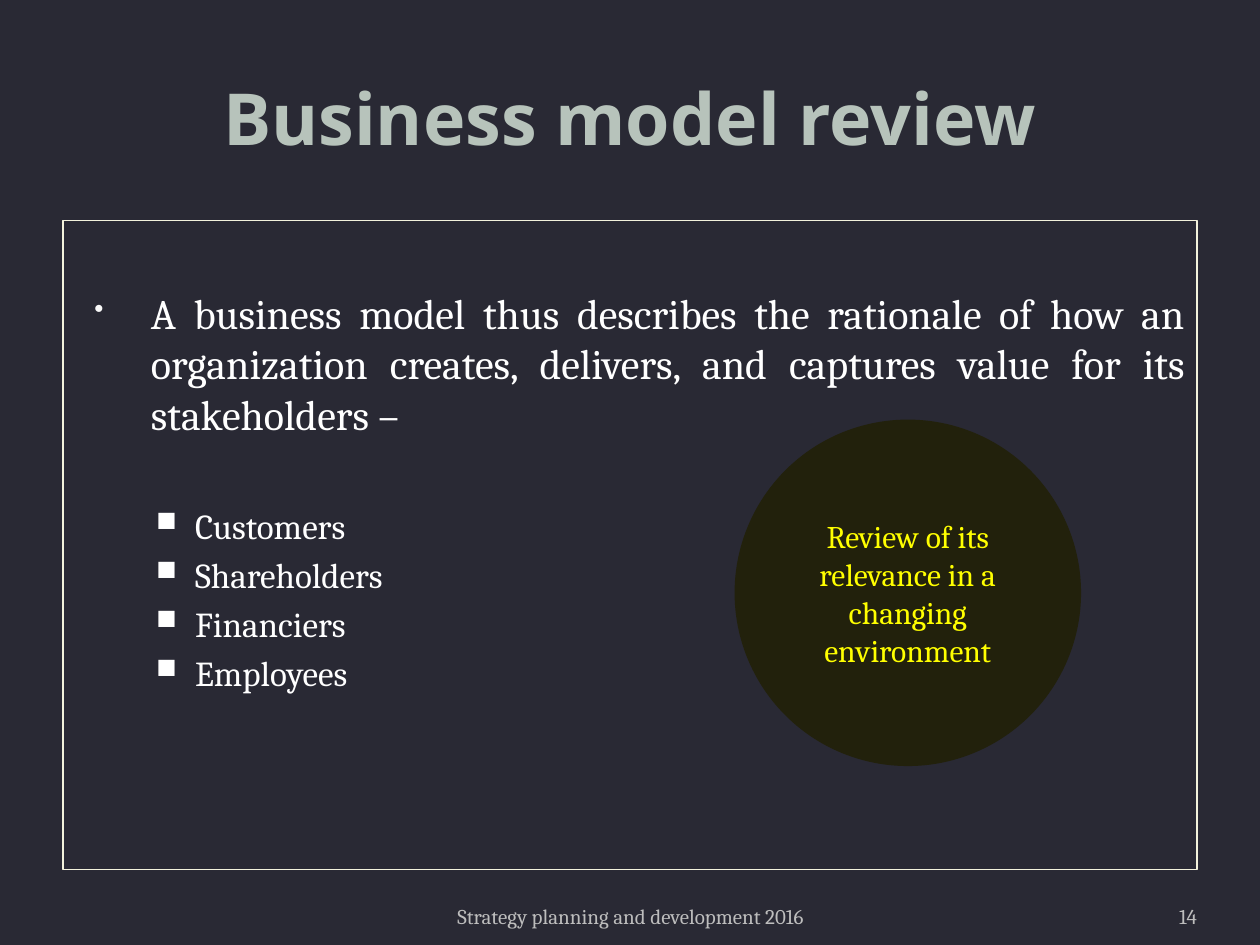
from pptx import Presentation
from pptx.dml.color import RGBColor
from pptx.enum.shapes import MSO_SHAPE
from pptx.enum.text import MSO_ANCHOR, PP_ALIGN
from pptx.oxml.ns import qn
from pptx.util import Inches, Pt
from lxml import etree

RECT, ELLIPSE = MSO_SHAPE.RECTANGLE, MSO_SHAPE.OVAL
TOP, MIDDLE, BOTTOM = MSO_ANCHOR.TOP, MSO_ANCHOR.MIDDLE, MSO_ANCHOR.BOTTOM
CENTER, RIGHT, JUSTIFY = PP_ALIGN.CENTER, PP_ALIGN.RIGHT, PP_ALIGN.JUSTIFY

BACKGROUND, WHITE, GREY = "292934", "FFFFFF", "BDBDBD"
TITLE_FONT, BODY_FONT = "Noto Sans", "Cambria"


def rgb(value):
    return RGBColor.from_string(value)


class SlideBuilder:
    def __init__(self, slide):
        self.slide = slide
        fill = slide.background.fill
        fill.solid()
        fill.fore_color.rgb = rgb(BACKGROUND)

    def frame(self, sp, anchor, side=0.1, top=0.05):
        tf = sp.text_frame
        tf.word_wrap = True
        tf.vertical_anchor = anchor
        tf.margin_left = tf.margin_right = Inches(side)
        tf.margin_top, tf.margin_bottom = Inches(top), Inches(0.05)
        return tf

    def run(self, p, text, size, color, font=BODY_FONT, bold=False):
        r = p.add_run()
        r.text = text
        r.font.size, r.font.name, r.font.bold = Pt(size), font, bold
        r.font.color.rgb = rgb(color)

    def text(self, box, text, size, color, align=CENTER, anchor=BOTTOM,
             side=0.1, font=BODY_FONT, bold=False):
        sp = self.slide.shapes.add_textbox(*map(Inches, box))
        p = self.frame(sp, anchor, side).paragraphs[0]
        p.alignment = align
        self.run(p, text, size, color, font, bold)

    def shape(self, kind, box, fill=None, line=None):
        sp = self.slide.shapes.add_shape(kind, *map(Inches, box))
        sp.shadow.inherit = False
        if fill:
            sp.fill.solid()
            sp.fill.fore_color.rgb = rgb(fill)
        else:
            sp.fill.background()
        if line:
            sp.line.color.rgb = rgb(line)
            sp.line.width = Pt(0.75)
        else:
            sp.line.fill.background()
        return sp

    def bullet(self, p, text, size, before, left, hang, char, color, percent):
        p.alignment = JUSTIFY
        p.space_before = Pt(before)
        pPr = p._p.get_or_add_pPr()
        pPr.set("marL", str(Inches(left)))
        pPr.set("indent", str(-Inches(hang)))
        clr = etree.SubElement(pPr, qn("a:buClr"))
        etree.SubElement(clr, qn("a:srgbClr"), val=color)
        etree.SubElement(pPr, qn("a:buSzPct"), val=str(percent * 1000))
        etree.SubElement(pPr, qn("a:buChar"), char=char)
        self.run(p, text, size, WHITE)


def main():
    prs = Presentation()
    prs.slide_width, prs.slide_height = Inches(10), Inches(7.5)
    s = SlideBuilder(prs.slides.add_slide(prs.slide_layouts[6]))

    # Title
    s.text((0.5, 0.3, 9, 1.25), "Business model review", 41, "B7C3BB",
           anchor=MIDDLE, font=TITLE_FONT, bold=True)

    # Framed body: statement and stakeholder list
    body = s.shape(RECT, (0.5, 1.75, 9, 5.15), line="F3F2DC")
    tf = s.frame(body, TOP, top=0.53)
    s.bullet(tf.paragraphs[0],
             "A business model thus describes the rationale of how an "
             "organization creates, delivers, and captures value for its "
             "stakeholders –", 24, 0, 0.6, 0.45, "•", "F9F9F9", 65)
    stakeholders = ["Customers", "Shareholders", "Financiers", "Employees"]
    for i, name in enumerate(stakeholders):
        s.bullet(tf.add_paragraph(), name, 20, 4 if i else 37.6,
                 0.95, 0.31, "■", WHITE, 80)

    # Review circle
    circle = s.shape(ELLIPSE, (5.83, 3.33, 2.75, 2.75), fill="22210C")
    p = s.frame(circle, MIDDLE).paragraphs[0]
    p.alignment = CENTER
    s.run(p, "Review of its relevance in a changing environment", 18, "FFFF00")

    # Footer and page number
    s.text((3.42, 7.02, 3.17, 0.4), "Strategy planning and development 2016",
           12, GREY)
    s.text((8.67, 7.02, 0.83, 0.4), "14", 12, GREY, align=RIGHT, side=0)

    prs.save("out.pptx")


if __name__ == "__main__":
    main()
